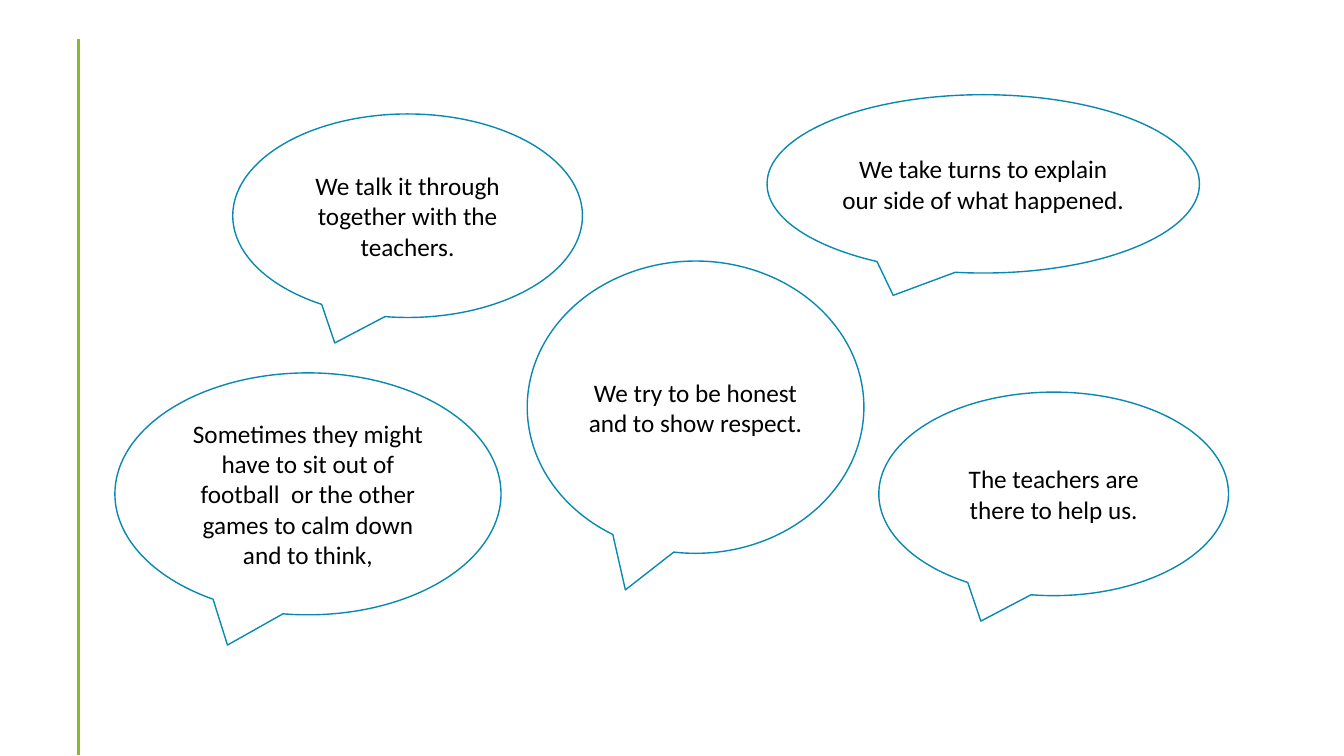
from dataclasses import dataclass

from lxml.etree import SubElement
from pptx import Presentation
from pptx.dml.color import RGBColor as RGB
from pptx.enum.shapes import MSO_CONNECTOR as CONN, MSO_SHAPE as SHAPE
from pptx.enum.text import MSO_ANCHOR as ANCHOR, PP_ALIGN as ALIGN
from pptx.oxml.ns import qn
from pptx.util import Pt


@dataclass(frozen=True)
class Theme:
    font: str = "Calibri"
    body_size: float = 18
    text: RGB = RGB(0x00, 0x00, 0x00)
    paper: RGB = RGB(0xFF, 0xFF, 0xFF)
    outline: RGB = RGB(0x09, 0x89, 0xB1)
    accent: RGB = RGB(0x8A, 0xB8, 0x33)
    outline_width: float = 1
    rule_width: float = 2


def write(tf, text, *, font, size, color, align=ALIGN.CENTER, anchor=ANCHOR.MIDDLE):
    tf.word_wrap = True
    tf.vertical_anchor = anchor
    p = tf.paragraphs[0]
    p.alignment = align
    r = p.add_run()
    r.text = text
    r.font.name = font
    r.font.size = Pt(size)
    r.font.color.rgb = color


class Deck:
    def __init__(self, prs, theme):
        self.prs = prs
        self.theme = theme
        self.s = None

    def blank_slide(self):
        self.s = self.prs.slides.add_slide(self.prs.slide_layouts[6])
        fill = self.s.background.fill
        fill.solid()
        fill.fore_color.rgb = self.theme.paper

    def rule(self, x1, y1, x2, y2):
        sp = self.s.shapes.add_connector(CONN.STRAIGHT, Pt(x1), Pt(y1), Pt(x2), Pt(y2))
        sp.line.color.rgb = self.theme.accent
        sp.line.width = Pt(self.theme.rule_width)
        SubElement(sp._element.spPr, qn("a:effectLst"))

    def bubble(self, text, x, y, w, h):
        t = self.theme
        sp = self.s.shapes.add_shape(SHAPE.OVAL_CALLOUT, Pt(x), Pt(y), Pt(w), Pt(h))
        sp.shadow.inherit = False
        sp.fill.solid()
        sp.fill.fore_color.rgb = t.paper
        sp.line.color.rgb = t.outline
        sp.line.width = Pt(t.outline_width)
        write(sp.text_frame, text, font=t.font, size=t.body_size, color=t.text)


BUBBLES = [
    ("We talk it through together with the teachers.", 166.3, 81.4, 249.8, 145.4),
    ("The teachers are there to help us.", 627.8, 280.1, 249.8, 145.4),
    ("We take turns to explain our side of what happened.", 547.9, 67.7, 308.9, 127.4),
    ("Sometimes they might have to sit out of football  or the other games "
     "to calm down and to think,", 82.1, 266.4, 275.8, 172.8),
    ("We try to be honest and to show respect.", 376.6, 186.5, 240.5, 208.8),
]


def main():
    prs = Presentation()
    prs.slide_width, prs.slide_height = Pt(960), Pt(540)
    deck = Deck(prs, Theme())
    deck.blank_slide()
    deck.rule(56.2, 28, 56.2, 539.5)
    for bubble in BUBBLES:
        deck.bubble(*bubble)
    prs.save("out.pptx")


if __name__ == "__main__":
    main()
